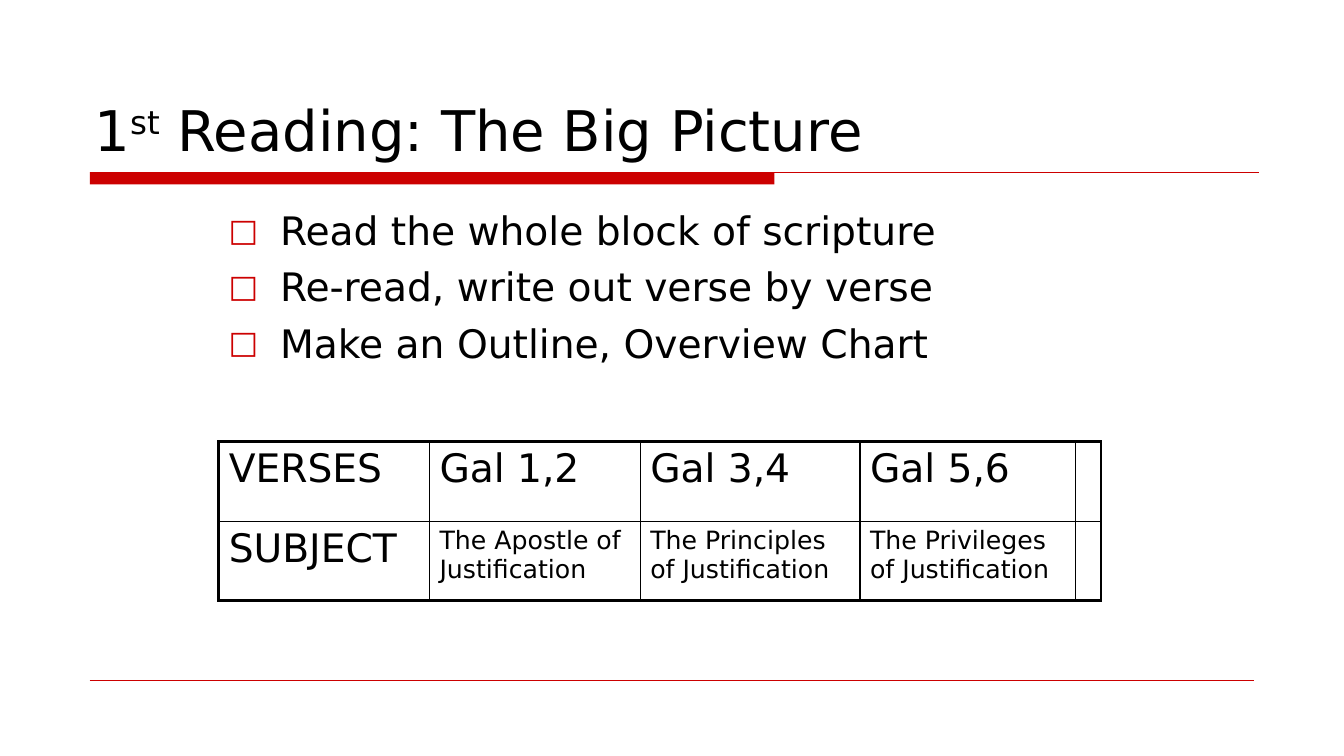
from pptx import Presentation
from pptx.dml.color import RGBColor
from pptx.enum.shapes import MSO_CONNECTOR, MSO_SHAPE
from pptx.enum.text import MSO_ANCHOR
from pptx.oxml.ns import qn
from pptx.util import Inches, Pt
from lxml.etree import SubElement
from dataclasses import dataclass


@dataclass(frozen=True)
class Theme:
    ink: str = "000000"
    red: str = "CC0000"
    face: str = "DejaVu Sans"
    title: float = 40
    body: float = 28
    small: float = 18
    thin: float = 1
    thick: float = 2.25


THEME = Theme()


def apply(target, values):
    for name, value in values.items():
        setattr(target, name, value)


def style(font, size):
    apply(font, {"name": THEME.face, "size": Pt(size)})
    font.color.rgb = RGBColor.from_string(THEME.ink)


def add_text(slide, box, anchor):
    frame = slide.shapes.add_textbox(*map(Inches, box)).text_frame
    apply(frame, {"word_wrap": True, "vertical_anchor": anchor})
    return frame


def add_rule(slide, left, top, width, weight):
    line = slide.shapes.add_connector(
        MSO_CONNECTOR.STRAIGHT,
        Inches(left), Inches(top), Inches(left + width), Inches(top))
    line.line.color.rgb = RGBColor.from_string(THEME.red)
    line.line.width = Pt(weight)
    SubElement(line._element.spPr, qn("a:effectLst"))


def add_frame(slide, box):
    left, top, width, height = box
    bar = slide.shapes.add_shape(
        MSO_SHAPE.RECTANGLE, Inches(left), Inches(top),
        Inches(6.79), Inches(0.12))
    bar.shadow.inherit = False
    bar.fill.solid()
    bar.fill.fore_color.rgb = RGBColor.from_string(THEME.red)
    bar.line.fill.background()
    add_rule(slide, left, top, width, 0.75)
    add_rule(slide, left, top + height, width - 0.05, 0.25)


def add_title(slide, box, parts):
    para = add_text(slide, box, MSO_ANCHOR.BOTTOM).paragraphs[0]
    for text, shift in parts:
        run = para.add_run()
        run.text = text
        style(run.font, THEME.title)
        if shift:
            run._r.get_or_add_rPr().set("baseline", str(shift))


def add_list(slide, box, items):
    frame = add_text(slide, box, MSO_ANCHOR.TOP)
    for index, text in enumerate(items):
        para = frame.add_paragraph() if index else frame.paragraphs[0]
        para.text = text
        props = para._p.get_or_add_pPr()
        apply(para, {"space_before": Pt(6.5 if index else 0)})
        props.set("marL", str(Inches(0.51)))
        props.set("indent", str(-Inches(0.51)))
        tint = SubElement(props, qn("a:buClr"))
        SubElement(tint, qn("a:srgbClr"), val=THEME.red)
        SubElement(props, qn("a:buSzPct"), val="80000")
        SubElement(props, qn("a:buFont"), typeface=THEME.face)
        SubElement(props, qn("a:buChar"), char="□")
        style(para.runs[0].font, THEME.body)


def add_edges(cell, outer):
    props = cell._tc.get_or_add_tcPr()
    for index, (side, edge) in enumerate(outer.items()):
        weight = THEME.thick if edge else THEME.thin
        line = props.makeelement(qn(f"a:{side}"), {"w": str(Pt(weight))})
        fill = SubElement(line, qn("a:solidFill"))
        SubElement(fill, qn("a:srgbClr"), val=THEME.ink)
        props.insert(index, line)


def add_grid(slide, box, widths, rows):
    shape = slide.shapes.add_table(
        len(rows), len(widths), *map(Inches, box))
    table = shape.table
    apply(table, {"first_row": False, "horz_banding": False})
    for column, width in zip(table.columns, widths):
        column.width = Inches(width)
    for r, row in enumerate(rows):
        table.rows[r].height = Inches(box[3] / len(rows))
        for c, text in enumerate(row):
            cell = table.cell(r, c)
            cell.fill.background()
            cell.text = text
            small = r and c
            style(cell.text_frame.paragraphs[0].font,
                  THEME.small if small else THEME.body)
            add_edges(cell, {
                "lnL": c == 0, "lnR": c == len(row) - 1,
                "lnT": r == 0, "lnB": r == len(rows) - 1})


def main():
    deck = Presentation()
    apply(deck, {"slide_width": Inches(13.33), "slide_height": Inches(7.5)})
    slide = deck.slides.add_slide(deck.slide_layouts[6])
    add_frame(slide, (0.89, 1.71, 11.6, 5.04))
    add_title(slide, (0.84, 0.33, 11.67, 1.33), [
        ("1", 0), ("st", 30000), (" Reading: The Big Picture", 0)])
    add_grid(slide, (2.17, 4.38, 8.75, 1.58), (2.09, 2.09, 2.18, 2.14, 0.25), [
        ("VERSES", "Gal 1,2", "Gal 3,4", "Gal 5,6", ""),
        ("SUBJECT", "The Apostle of Justification",
         "The Principles of Justification",
         "The Privileges of Justification", "")])
    add_list(slide, (2.17, 2, 8.75, 2.25), [
        "Read the whole block of scripture",
        "Re-read, write out verse by verse",
        "Make an Outline, Overview Chart"])
    deck.save("out.pptx")


if __name__ == "__main__":
    main()
